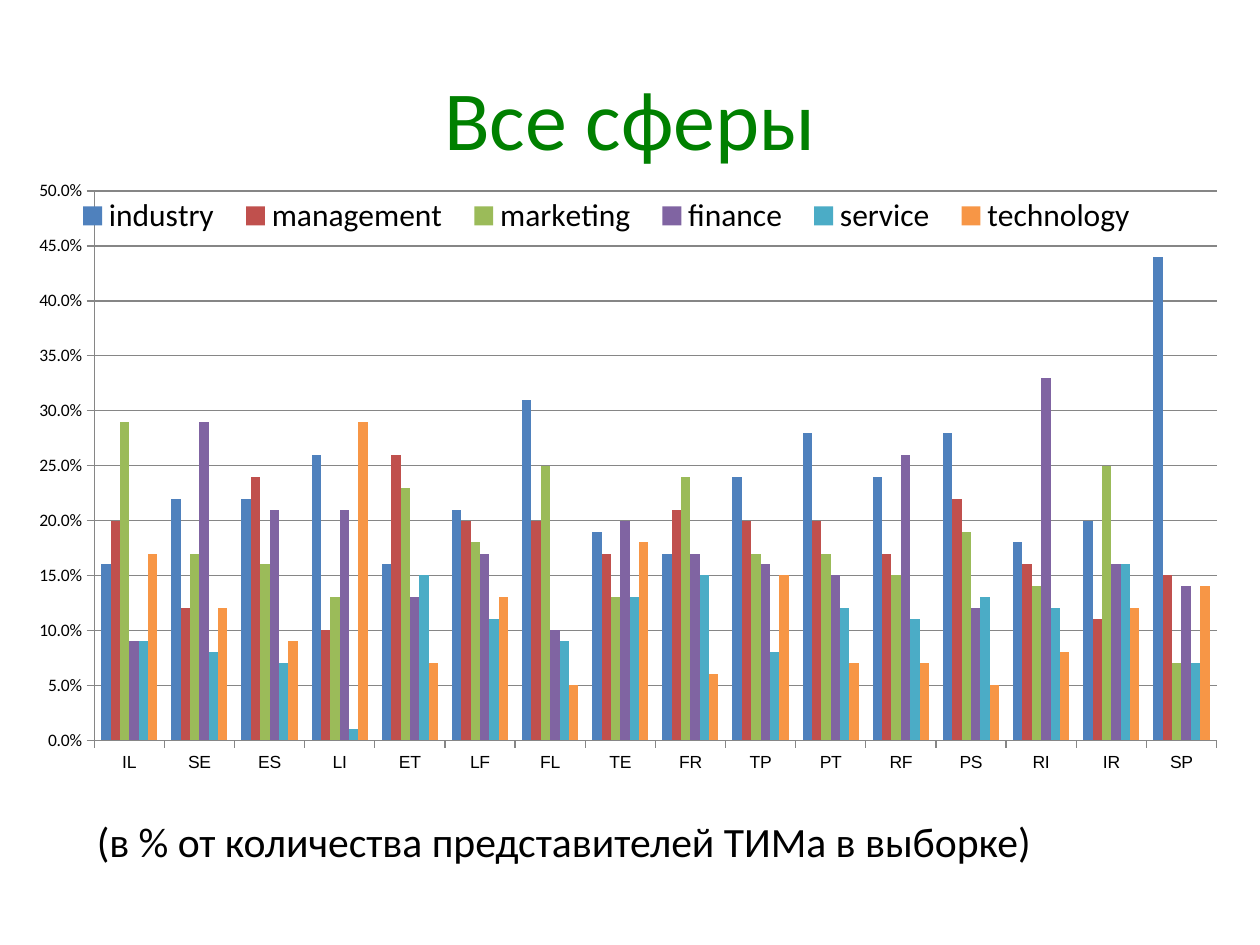
from dataclasses import dataclass

from lxml import etree
from pptx import Presentation
from pptx.chart.data import CategoryChartData
from pptx.dml.color import RGBColor
from pptx.enum.chart import XL_CHART_TYPE as ChartType
from pptx.enum.chart import XL_LEGEND_POSITION as LegendPosition
from pptx.enum.chart import XL_TICK_MARK as TickMark
from pptx.enum.shapes import MSO_SHAPE as ShapeType
from pptx.enum.text import MSO_ANCHOR as Anchor
from pptx.enum.text import MSO_AUTO_SIZE as AutoSize
from pptx.enum.text import PP_ALIGN as Align
from pptx.oxml.ns import qn
from pptx.util import Inches, Pt

BLACK = RGBColor(0x00, 0x00, 0x00)
WHITE = RGBColor(0xFF, 0xFF, 0xFF)
GREEN = RGBColor(0x00, 0x80, 0x00)
GRAY = RGBColor(0x86, 0x86, 0x86)
BLUE = RGBColor(0x4F, 0x81, 0xBD)
RED = RGBColor(0xC0, 0x50, 0x4D)
OLIVE = RGBColor(0x9B, 0xBB, 0x59)
PURPLE = RGBColor(0x80, 0x64, 0xA2)
AQUA = RGBColor(0x4B, 0xAC, 0xC6)
ORANGE = RGBColor(0xF7, 0x96, 0x46)


@dataclass(frozen=True)
class Sphere:
    name: str
    color: RGBColor
    percents: tuple[int, ...]


@dataclass(frozen=True)
class Box:
    left: float
    top: float
    width: float
    height: float

    def lengths(self) -> tuple:
        return tuple(map(Inches, (self.left, self.top, self.width, self.height)))


TYPES = "IL SE ES LI ET LF FL TE FR TP PT RF PS RI IR SP".split()
SPHERES = (
    Sphere("industry", BLUE, (16, 22, 22, 26, 16, 21, 31, 19, 17, 24, 28, 24, 28, 18, 20, 44)),
    Sphere("management", RED, (20, 12, 24, 10, 26, 20, 20, 17, 21, 20, 20, 17, 22, 16, 11, 15)),
    Sphere("marketing", OLIVE, (29, 17, 16, 13, 23, 18, 25, 13, 24, 17, 17, 15, 19, 14, 25, 7)),
    Sphere("finance", PURPLE, (9, 29, 21, 21, 13, 17, 10, 20, 17, 16, 15, 26, 12, 33, 16, 14)),
    Sphere("service", AQUA, (9, 8, 7, 1, 15, 11, 9, 13, 15, 8, 12, 11, 13, 12, 16, 7)),
    Sphere("technology", ORANGE, (17, 12, 9, 29, 7, 13, 5, 18, 6, 15, 7, 7, 5, 8, 12, 14)),
)


def style_font(font, size: float, color: RGBColor, name: str = "Calibri") -> None:
    font.name = name
    font.size = Pt(size)
    font.bold = False
    font.color.rgb = color


def add_text(frame, text: str, size: float, color: RGBColor, align: Align) -> None:
    paragraph = frame.paragraphs[0]
    paragraph.alignment = align
    run = paragraph.add_run()
    run.text = text
    style_font(run.font, size, color)


def make_layout(box: Box, inner: bool = False):
    layout = etree.Element(qn("c:layout"))
    manual = etree.SubElement(layout, qn("c:manualLayout"))
    settings = [("layoutTarget", "inner")] if inner else []
    settings += [("xMode", "edge"), ("yMode", "edge")]
    settings += [("x", box.left), ("y", box.top), ("w", box.width), ("h", box.height)]
    for tag, value in settings:
        etree.SubElement(manual, qn(f"c:{tag}")).set("val", str(value))
    return layout


def place_chart_parts(chart, plot: Box, legend: Box) -> None:
    for layout in chart.element.xpath("//c:plotArea/c:layout | //c:legend/c:layout"):
        layout.getparent().remove(layout)
    chart.element.xpath("//c:plotArea")[0].insert(0, make_layout(plot, inner=True))
    chart.element.xpath("//c:legend/c:overlay")[0].addprevious(make_layout(legend))


def style_axis(axis, font_name: str) -> None:
    axis.major_tick_mark = TickMark.OUTSIDE
    axis.minor_tick_mark = TickMark.NONE
    axis.format.line.color.rgb = GRAY
    style_font(axis.tick_labels.font, 10, BLACK, font_name)


def add_sphere_chart(slide, box: Box) -> None:
    data = CategoryChartData(number_format="0.0%")
    data.categories = TYPES
    for sphere in SPHERES:
        data.add_series(sphere.name, [percent / 100 for percent in sphere.percents])
    chart = slide.shapes.add_chart(ChartType.COLUMN_CLUSTERED, *box.lengths(), data).chart
    chart.has_title = False
    style_font(chart.font, 10, BLACK)

    plot = chart.plots[0]
    plot.gap_width = 150
    plot.overlap = 0
    plot.vary_by_categories = False
    for series, sphere in zip(plot.series, SPHERES):
        series.format.fill.solid()
        series.format.fill.fore_color.rgb = sphere.color

    style_axis(chart.category_axis, "Arial")
    value_axis = chart.value_axis
    style_axis(value_axis, "Calibri")
    value_axis.minimum_scale = 0
    value_axis.maximum_scale = 0.5
    value_axis.major_unit = 0.05
    value_axis.has_major_gridlines = True
    value_axis.major_gridlines.format.line.color.rgb = GRAY
    value_axis.tick_labels.number_format = "0.0%"
    value_axis.tick_labels.number_format_is_linked = False

    chart.has_legend = True
    chart.legend.position = LegendPosition.RIGHT
    chart.legend.include_in_layout = True
    style_font(chart.legend.font, 18, BLACK)
    place_chart_parts(chart, Box(0.057, 0.041, 0.927, 0.865), Box(0.03, 0.04, 0.9, 0.08))


def add_caption(slide, box: Box, text: str) -> None:
    shape = slide.shapes.add_shape(ShapeType.RECTANGLE, *box.lengths())
    shape.shadow.inherit = False
    shape.line.fill.background()
    shape.fill.solid()
    shape.fill.fore_color.rgb = WHITE
    color = shape.element.spPr.find(f"{qn('a:solidFill')}/{qn('a:srgbClr')}")
    etree.SubElement(color, qn("a:alpha")).set("val", "90000")
    shape.text_frame.word_wrap = True
    shape.text_frame.vertical_anchor = Anchor.TOP
    add_text(shape.text_frame, text, 23.8, BLACK, Align.LEFT)


def add_title(slide, box: Box, text: str) -> None:
    title = slide.shapes.title
    title.left, title.top, title.width, title.height = box.lengths()
    title.text_frame.auto_size = AutoSize.NONE
    title.text_frame.vertical_anchor = Anchor.MIDDLE
    add_text(title.text_frame, text, 48, GREEN, Align.CENTER)


def main() -> None:
    presentation = Presentation()
    presentation.slide_width = Inches(10)
    presentation.slide_height = Inches(7.5)
    slide = presentation.slides.add_slide(presentation.slide_layouts[5])
    add_title(slide, Box(0.5, 0.3, 9, 1.25), "Все сферы")
    add_sphere_chart(slide, Box(0.2, 1.31, 9.61, 5.04))
    add_caption(slide, Box(0.67, 6.43, 9, 0.44), "(в % от количества представителей ТИМа в выборке)")
    presentation.save("out.pptx")


if __name__ == "__main__":
    main()
